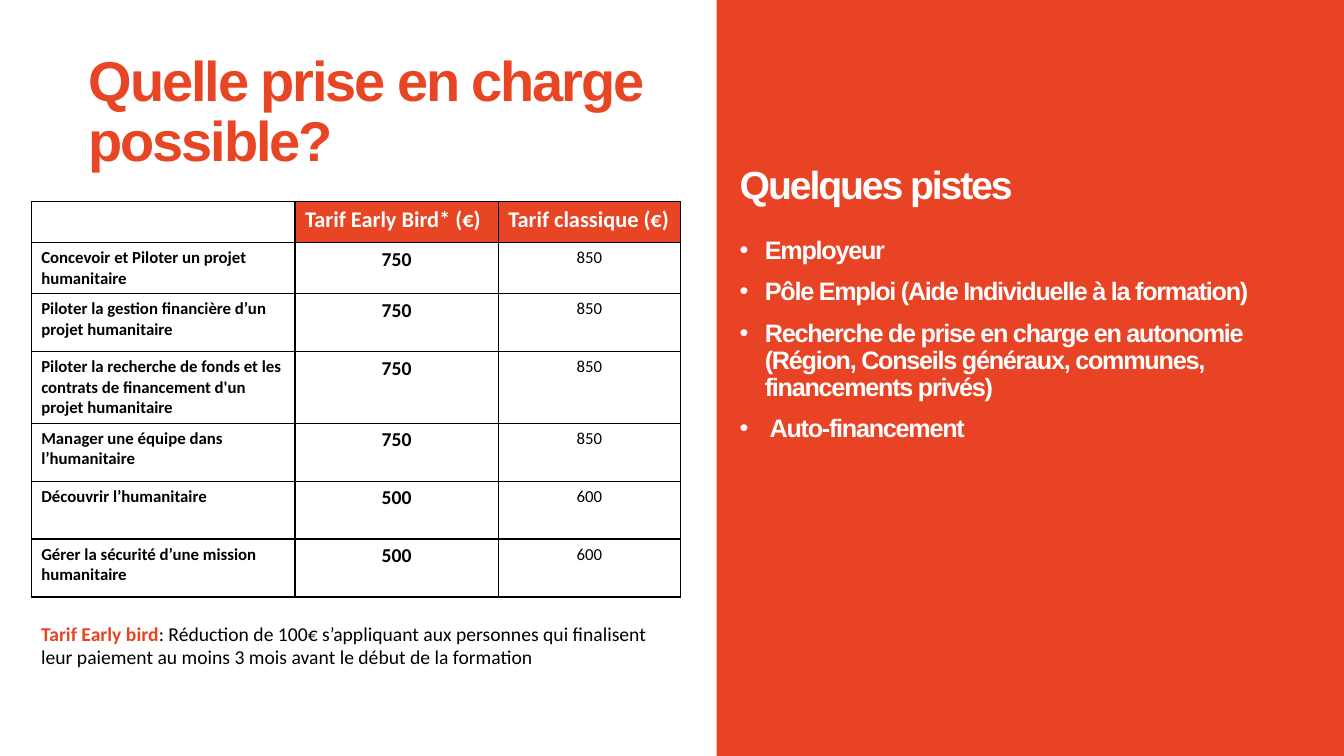
from dataclasses import dataclass, field

from lxml import etree
from pptx import Presentation
from pptx.dml.color import RGBColor
from pptx.enum import shapes, text
from pptx.oxml import ns
from pptx.util import Pt

ORANGE, PANEL, WHITE, BLACK = "E84525", "E84324", "FFFFFF", "000000"


@dataclass
class Style:
    size: float
    color: str = BLACK
    bold: bool = True
    font: str = "Calibri"
    spacing: float = 0


@dataclass
class Span:
    words: str
    style: Style


@dataclass
class Block:
    """A text box: its place in points, its paragraphs and their format."""
    place: tuple[float, float, float, float]
    paras: list[list[Span]]
    anchor: text.MSO_ANCHOR = text.MSO_ANCHOR.TOP
    para_format: dict = field(default_factory=dict)
    bulleted: bool = False


@dataclass
class Course:
    name: str
    early: str
    standard: str


HEADING = Style(40, ORANGE, font="Arial", spacing=-1.5)
SUBHEADING = Style(28, WHITE, font="Arial", spacing=-1.5)
BULLET = Style(18, WHITE, font="Arial", spacing=-0.9)
HEADER = Style(16, WHITE)
COURSE = Style(12)
EARLY = Style(14)
STANDARD = Style(12, bold=False)
TIGHT = {"line_spacing": 0.9, "alignment": text.PP_ALIGN.LEFT}

COURSES = [
    Course("Concevoir et Piloter un projet humanitaire", "750", "850"),
    Course("Piloter la gestion financière d’un projet humanitaire", "750", "850"),
    Course("Piloter la recherche de fonds et les contrats de financement "
           "d'un projet humanitaire", "750", "850"),
    Course("Manager une équipe dans l’humanitaire", "750", "850"),
    Course("Découvrir l’humanitaire", "500", "600"),
    Course("Gérer la sécurité d’une mission humanitaire", "500", "600"),
]
COLUMN_WIDTHS = [188.4, 145.2, 130.4]
ROW_HEIGHTS = [29.3, 36.5, 41.4, 51.1, 41.4, 41.4, 41.4]

TITLE = Block((56.2, 28.8, 429.8, 104.4),
              [[Span("Quelle prise en charge possible?", HEADING)]],
              text.MSO_ANCHOR.MIDDLE, TIGHT)
BOXES = [
    Block((521.3, 166.3, 429.8, 320.4),
          [[Span(words, BULLET)] for words in (
              "Employeur",
              "Pôle Emploi (Aide Individuelle à la formation)",
              "Recherche de prise en charge en autonomie (Région, Conseils "
              "généraux, communes, financements privés)",
              " Auto-financement")],
          para_format=TIGHT | {"space_before": Pt(10)}, bulleted=True),
    Block((521.3, 110.2, 429.8, 46.1), [[Span("Quelques pistes", SUBHEADING)]],
          text.MSO_ANCHOR.MIDDLE, TIGHT),
    Block((22.3, 440.6, 463.7, 41),
          [[Span("Tarif Early bird", Style(14, ORANGE)),
            Span(": Réduction de 100€ s’appliquant aux personnes qui finalisent "
                 "leur paiement au moins 3 mois avant le début de la formation",
                 Style(14, bold=False))]]),
]


def rgb(color: str) -> RGBColor:
    return RGBColor.from_string(color)


def assign(target, values: dict) -> None:
    for name, value in values.items():
        setattr(target, name, value)


def add_span(para, span: Span) -> None:
    run = para.add_run()
    run.text = span.words
    style = span.style
    assign(run.font, {"size": Pt(style.size), "bold": style.bold, "name": style.font})
    run.font.color.rgb = rgb(style.color)
    if style.spacing:
        run._r.get_or_add_rPr().set("spc", str(round(style.spacing * 100)))


def add_bullet(para) -> None:
    properties = para._p.get_or_add_pPr()
    properties.set("marL", str(Pt(18)))
    properties.set("indent", str(Pt(-18)))
    etree.SubElement(properties, ns.qn("a:buFont"), typeface="Arial")
    etree.SubElement(properties, ns.qn("a:buChar"), char="•")


def fill_block(shape, block: Block) -> None:
    left, top, width, height = map(Pt, block.place)
    assign(shape, {"left": left, "top": top, "width": width, "height": height})
    frame = shape.text_frame
    assign(frame, {"word_wrap": True, "auto_size": text.MSO_AUTO_SIZE.NONE,
                   "vertical_anchor": block.anchor})
    for index, spans in enumerate(block.paras):
        para = frame.add_paragraph() if index else frame.paragraphs[0]
        if block.bulleted:
            add_bullet(para)
        assign(para, block.para_format)
        if index == 0:
            para.space_before = Pt(0)
        for span in spans:
            add_span(para, span)


def add_borders(cell) -> None:
    properties = cell._tc.get_or_add_tcPr()
    for index, side in enumerate(("lnL", "lnR", "lnT", "lnB")):
        line = etree.Element(ns.qn(f"a:{side}"), w=str(Pt(1)))
        solid = etree.SubElement(line, ns.qn("a:solidFill"))
        etree.SubElement(solid, ns.qn("a:srgbClr"), val=BLACK)
        properties.insert(index, line)


def add_prices(page) -> None:
    rows = [[None, Span("Tarif Early Bird* (€)", HEADER),
             Span("Tarif classique (€)", HEADER)]]
    rows += [[Span(course.name, COURSE), Span(course.early, EARLY),
              Span(course.standard, STANDARD)] for course in COURSES]
    table = page.shapes.add_table(
        len(rows), len(COLUMN_WIDTHS), Pt(22.3), Pt(144),
        Pt(sum(COLUMN_WIDTHS)), Pt(sum(ROW_HEIGHTS))).table
    assign(table, {"first_row": False, "horz_banding": False})
    for column, width in zip(table.columns, COLUMN_WIDTHS):
        column.width = Pt(width)
    for r, (row, height) in enumerate(zip(table.rows, ROW_HEIGHTS)):
        row.height = Pt(height)
        for c, (cell, span) in enumerate(zip(row.cells, rows[r])):
            cell.fill.solid()
            cell.fill.fore_color.rgb = rgb(ORANGE if r == 0 and c else WHITE)
            add_borders(cell)
            para = cell.text_frame.paragraphs[0]
            if r and c:
                para.alignment = text.PP_ALIGN.CENTER
            if span:
                add_span(para, span)


def add_panel(page) -> None:
    panel = page.shapes.add_shape(
        shapes.MSO_SHAPE.RECTANGLE, Pt(512), Pt(0), Pt(448), Pt(540))
    panel.shadow.inherit = False
    panel.fill.solid()
    panel.fill.fore_color.rgb = rgb(PANEL)
    panel.line.fill.background()


def main() -> None:
    deck = Presentation()
    assign(deck, {"slide_width": Pt(960), "slide_height": Pt(540)})
    page = deck.slides.add_slide(deck.slide_layouts.get_by_name("Title Only"))
    add_panel(page)
    fill_block(page.shapes.title, TITLE)
    add_prices(page)
    for block in BOXES:
        fill_block(page.shapes.add_textbox(*map(Pt, block.place)), block)
    deck.save("out.pptx")


if __name__ == "__main__":
    main()
